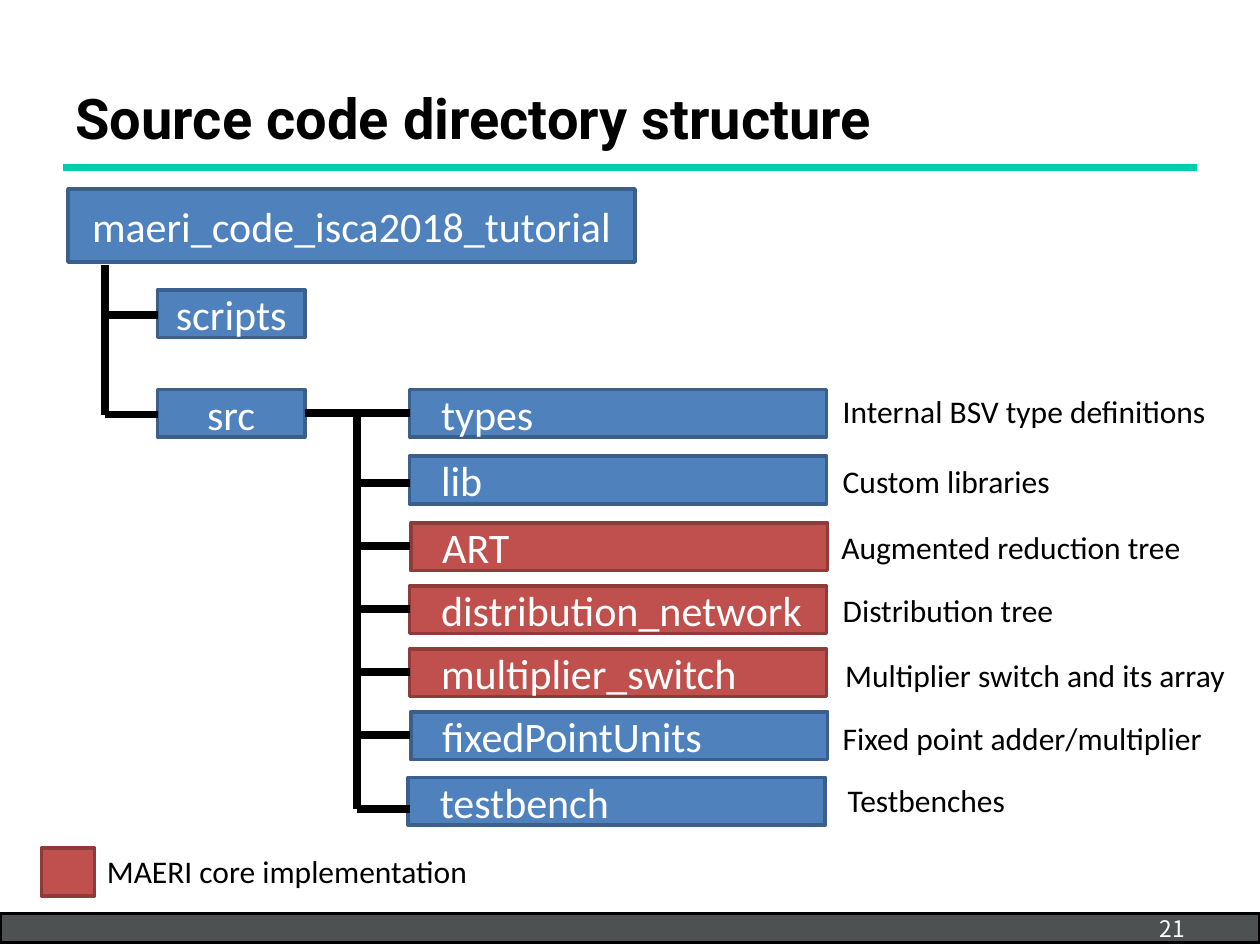
from dataclasses import dataclass

from lxml import etree
from pptx import Presentation
from pptx.dml.color import RGBColor
from pptx.enum.shapes import MSO_CONNECTOR, MSO_SHAPE
from pptx.enum.text import MSO_ANCHOR, PP_ALIGN
from pptx.oxml.ns import qn
from pptx.util import Inches, Pt

RECTANGLE = MSO_SHAPE.RECTANGLE
STRAIGHT = MSO_CONNECTOR.STRAIGHT
TOP, MIDDLE, BOTTOM = MSO_ANCHOR.TOP, MSO_ANCHOR.MIDDLE, MSO_ANCHOR.BOTTOM
LEFT, CENTER, RIGHT = PP_ALIGN.LEFT, PP_ALIGN.CENTER, PP_ALIGN.RIGHT

COLORS = {
    "black": "000000", "white": "FFFFFF", "teal": "00CCAF", "footer": "4E5152",
    "blue": "4F81BD", "blue_edge": "3A5F8C", "red": "C0504D", "red_edge": "8E3B39",
}
TITLE_FORMAT = {"name": "Roboto", "size": Pt(32), "bold": True}
FOLDER_FORMAT = {"name": "Calibri", "size": Pt(24)}
NOTE_FORMAT = {"name": "Calibri", "size": Pt(18)}
NUMBER_FORMAT = {"name": "Noto Sans CJK KR", "size": Pt(13)}

ROW_HEIGHT = 0.38
TRUNK_X, SOURCE_TRUNK_X = 0.83, 2.83
SOURCE_Y = 3.28


@dataclass
class Folder:
    name: str
    left: float
    top: float
    width: float
    height: float = ROW_HEIGHT
    color: str = "blue"
    align: PP_ALIGN = CENTER
    indent: float = 0.1


@dataclass
class Entry:
    name: str
    note: str
    left: float
    top: float
    note_left: float
    note_top: float
    branch_y: float
    color: str = "blue"


TOP_FOLDERS = [
    Folder("maeri_code_isca2018_tutorial", 0.54, 1.5, 4.5, 0.58),
    Folder("scripts", 1.25, 2.3, 1.17),
    Folder("src", 1.25, 3.09, 1.17),
]
ENTRIES = [
    Entry("types", "Internal BSV type definitions", 3.25, 3.09, 6.59, 3.06, SOURCE_Y),
    Entry("lib", "Custom libraries", 3.25, 3.62, 6.59, 3.62, 3.83),
    Entry("ART", "Augmented reduction tree", 3.26, 4.15, 6.58, 4.14, 4.33, "red"),
    Entry("distribution_network", "Distribution tree", 3.25, 4.65, 6.59, 4.64, 4.83, "red"),
    Entry("multiplier_switch", "Multiplier switch and its array",
          3.25, 5.15, 6.61, 5.16, 5.33, "red"),
    Entry("fixedPointUnits", "Fixed point adder/multiplier", 3.26, 5.65, 6.59, 5.66, 5.83),
    Entry("testbench", "Testbenches", 3.24, 6.17, 6.63, 6.15, 6.42),
]


def rgb(color: str) -> RGBColor:
    return RGBColor.from_string(COLORS[color])


def write(shape, text: str, font_format: dict, color: str,
          align: PP_ALIGN = LEFT, anchor: MSO_ANCHOR = TOP) -> None:
    frame = shape.text_frame
    frame.word_wrap = True
    frame.vertical_anchor = anchor
    para = frame.paragraphs[0]
    para.alignment = align
    span = para.add_run()
    span.text = text
    for attribute, value in font_format.items():
        setattr(span.font, attribute, value)
    span.font.color.rgb = rgb(color)


def add_box(slide, left: float, top: float, width: float, height: float,
            fill: str, edge: str):
    box = slide.shapes.add_shape(
        RECTANGLE, Inches(left), Inches(top), Inches(width), Inches(height))
    box.shadow.inherit = False
    box.fill.solid()
    box.fill.fore_color.rgb = rgb(fill)
    box.line.color.rgb = rgb(edge)
    box.line.width = Pt(2)
    return box


def add_folder(slide, folder: Folder) -> None:
    box = add_box(slide, folder.left, folder.top, folder.width, folder.height,
                  folder.color, f"{folder.color}_edge")
    write(box, folder.name, FOLDER_FORMAT, "white", folder.align, MIDDLE)
    box.text_frame.margin_left = Inches(folder.indent)


def add_line(slide, x1: float, y1: float, x2: float, y2: float,
             color: str = "black", width: float = 4.5) -> None:
    line = slide.shapes.add_connector(
        STRAIGHT, Inches(x1), Inches(y1), Inches(x2), Inches(y2))
    line.line.color.rgb = rgb(color)
    line.line.width = Pt(width)
    etree.SubElement(line._element.spPr, qn("a:effectLst"))


def add_note(slide, text: str, left: float, top: float, width: float = 3.26) -> None:
    note = slide.shapes.add_textbox(
        Inches(left), Inches(top), Inches(width), Inches(0.4))
    write(note, text, NOTE_FORMAT, "black")


def add_frame(slide) -> None:
    # Footer bar, title rule, title and page number
    add_box(slide, 0, 7.25, 10, 0.23, "footer", "black")
    add_line(slide, 0.5, 1.33, 9.5, 1.33, "teal", 4)
    title = slide.shapes.title
    title.left, title.top = Inches(0.5), Inches(0.5)
    title.width, title.height = Inches(9), Inches(0.75)
    write(title, "Source code directory structure", TITLE_FORMAT, "black", LEFT, BOTTOM)
    number = slide.shapes.add_textbox(
        Inches(8.08), Inches(7.25), Inches(1.42), Inches(0.23))
    write(number, "21", NUMBER_FORMAT, "white", RIGHT, MIDDLE)


def add_tree(slide) -> None:
    # Folders
    for folder in TOP_FOLDERS:
        add_folder(slide, folder)
    for entry in ENTRIES:
        add_folder(slide, Folder(entry.name, entry.left, entry.top, 3.31,
                                 color=entry.color, align=LEFT, indent=0.25))
        add_note(slide, entry.note, entry.note_left, entry.note_top)

    # Trunks and branches
    add_line(slide, TRUNK_X, 2.1, TRUNK_X, 3.29)
    for branch_y in (2.5, 3.29):
        add_line(slide, TRUNK_X, branch_y, 1.25, branch_y)
    add_line(slide, SOURCE_TRUNK_X, SOURCE_Y, SOURCE_TRUNK_X, ENTRIES[-1].branch_y)
    for entry in ENTRIES:
        start = 2.42 if entry.branch_y == SOURCE_Y else SOURCE_TRUNK_X
        add_line(slide, start, entry.branch_y, 3.25, entry.branch_y)


def main() -> None:
    deck = Presentation()
    deck.slide_width, deck.slide_height = Inches(10), Inches(7.5)
    page = deck.slides.add_slide(deck.slide_layouts[5])
    add_frame(page)
    add_tree(page)

    # Legend
    add_box(page, 0.33, 6.73, 0.42, ROW_HEIGHT, "red", "red_edge")
    add_note(page, "MAERI core implementation", 0.75, 6.71, 3.67)

    deck.save("out.pptx")


if __name__ == "__main__":
    main()
